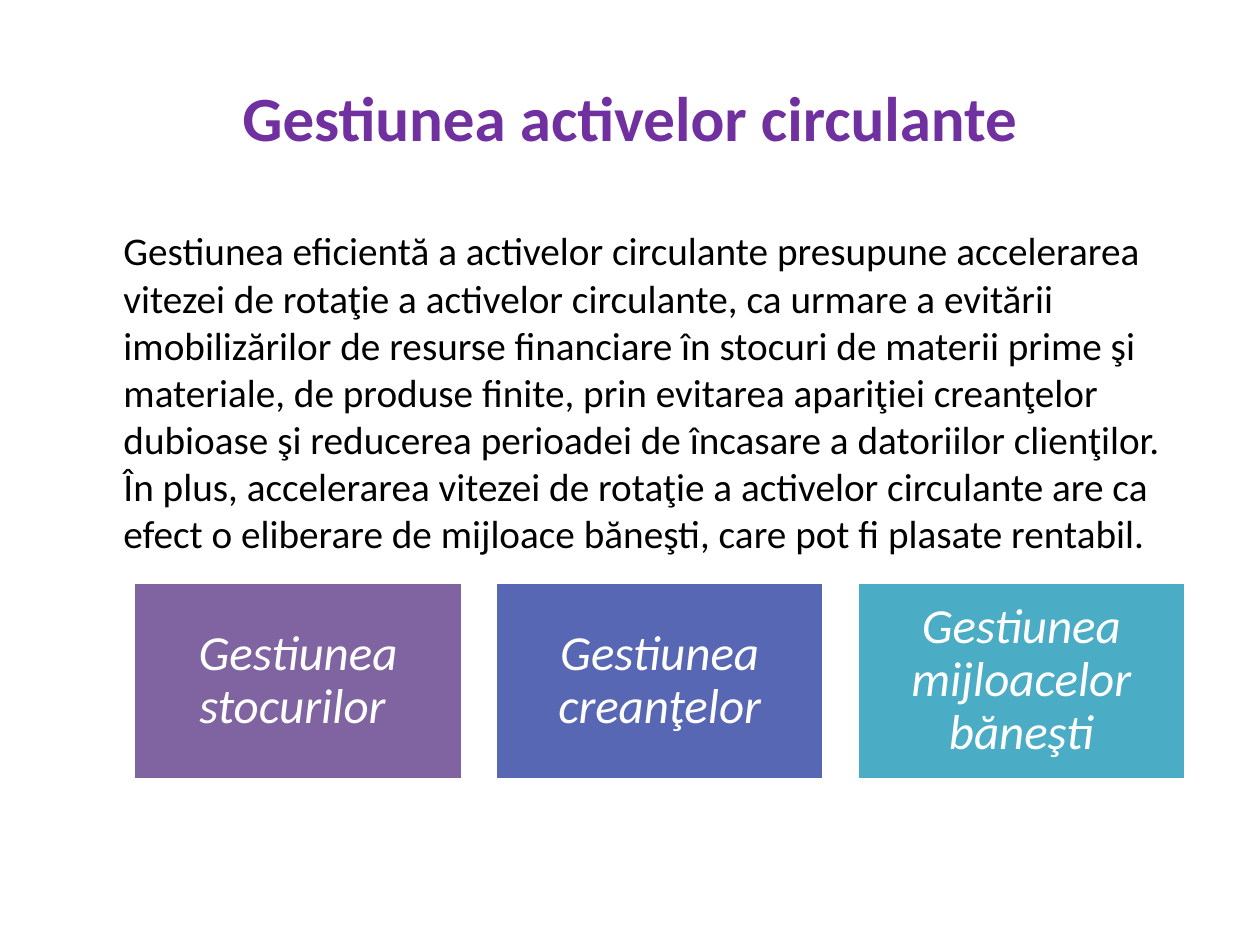
from dataclasses import dataclass

from pptx import Presentation
from pptx import util as u
from pptx.dml.color import RGBColor
from pptx.enum import shapes, text
from pptx.oxml.ns import qn
from lxml import etree


@dataclass(frozen=True)
class Theme:
    font: str = "Calibri"
    title_color: str = "7030A0"
    body_color: str = "000000"
    light: str = "FFFFFF"
    cards: tuple = ("8064A2", "5767B4", "4BACC6")
    title_size: float = 36
    body_size: float = 22.4
    card_size: float = 28


class SlideBuilder:
    def __init__(self, deck, theme):
        self.deck = deck
        self.theme = theme
        self.page = deck.slides.add_slide(deck.slide_layouts[1])

    def place(self, box, left, top, width, height):
        """Position a box by shares of the slide's size."""
        box.left = round(self.deck.slide_width * left)
        box.top = round(self.deck.slide_height * top)
        box.width = round(self.deck.slide_width * width)
        box.height = round(self.deck.slide_height * height)

    def add_words(self, box, words, size, color, bold=False, italic=False):
        frame = box.text_frame
        frame.word_wrap = True
        frame.auto_size = text.MSO_AUTO_SIZE.NONE
        para = frame.paragraphs[0]
        span = para.add_run()
        span.text = words
        span.font.name = self.theme.font
        span.font.size = u.Pt(size)
        span.font.bold = bold
        span.font.italic = italic
        span.font.color.rgb = RGBColor.from_string(color)
        return para

    def title(self, words, *area):
        box = self.page.shapes.title
        self.place(box, *area)
        para = self.add_words(box, words, self.theme.title_size,
                              self.theme.title_color, bold=True)
        para.alignment = text.PP_ALIGN.CENTER
        box.text_frame.vertical_anchor = text.MSO_ANCHOR.MIDDLE

    def body(self, words, *area):
        box = self.page.placeholders[1]
        self.place(box, *area)
        para = self.add_words(box, words, self.theme.body_size, self.theme.body_color)
        # Indented block without a bullet
        props = para._p.get_or_add_pPr()
        props.set("marL", str(u.Inches(0.38)))
        props.set("indent", "0")
        etree.SubElement(props, qn("a:buNone"))

    def card(self, words, color, *area):
        box = self.page.shapes.add_shape(shapes.MSO_SHAPE.RECTANGLE, 0, 0, 0, 0)
        self.place(box, *area)
        box.shadow.inherit = False
        box.fill.solid()
        box.fill.fore_color.rgb = RGBColor.from_string(color)
        box.line.color.rgb = RGBColor.from_string(self.theme.light)
        box.line.width = u.Pt(2)
        para = self.add_words(box, words, self.theme.card_size, self.theme.light, italic=True)
        para.alignment = text.PP_ALIGN.CENTER
        para.line_spacing = 0.9
        frame = box.text_frame
        frame.vertical_anchor = text.MSO_ANCHOR.MIDDLE
        frame.margin_left = frame.margin_right = u.Inches(0.12)
        frame.margin_top = frame.margin_bottom = u.Inches(0.12)

    def card_row(self, labels, left, top, width, height, step):
        for column, (words, color) in enumerate(zip(labels, self.theme.cards)):
            self.card(words, color, left + column * step, top, width, height)


def main():
    deck = Presentation()
    deck.slide_width, deck.slide_height = u.Inches(10), u.Inches(7.5)
    slide = SlideBuilder(deck, Theme())

    # Heading and explanation
    slide.title("Gestiunea activelor circulante", 0.05, 0.04, 0.9, 1 / 6)
    slide.body(
        "Gestiunea eficientă a activelor circulante presupune accelerarea vitezei "
        "de rotaţie a activelor circulante, ca urmare a evitării imobilizărilor de "
        "resurse financiare în stocuri de materii prime şi materiale, de produse "
        "finite, prin evitarea apariţiei creanţelor dubioase şi reducerea perioadei "
        "de încasare a datoriilor clienţilor. În plus, accelerarea vitezei de rotaţie "
        "a activelor circulante are ca efect o eliberare de mijloace băneşti, care "
        "pot fi plasate rentabil.",
        0.05, 7 / 30, 0.9, 0.34)

    # Three areas of management
    slide.card_row(
        ("Gestiunea stocurilor ", "Gestiunea creanţelor", "Gestiunea mijloacelor băneşti"),
        left=0.106, top=4.62 / 7.5, width=0.261, height=1.57 / 7.5, step=0.287)

    deck.save("out.pptx")


if __name__ == "__main__":
    main()
